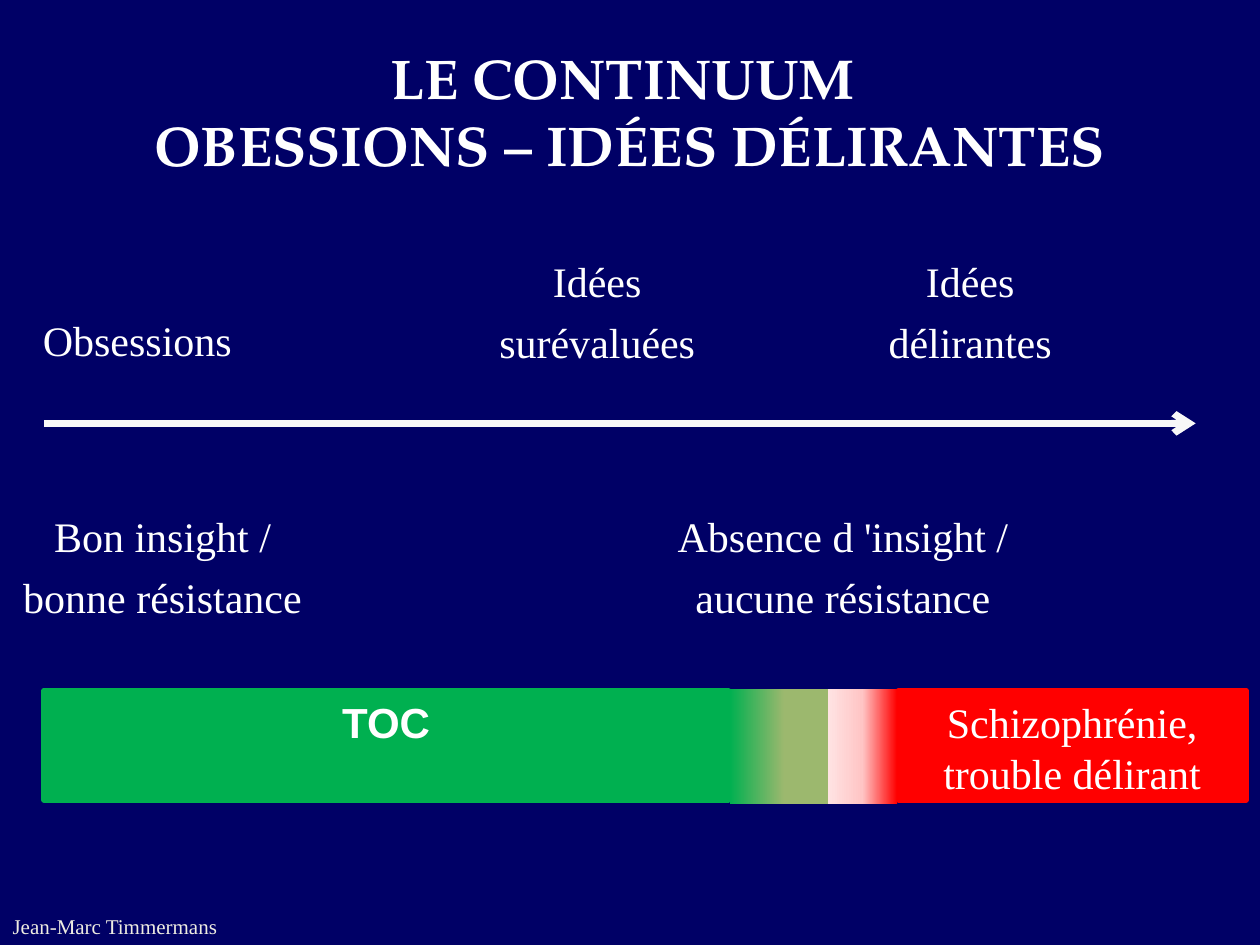
from lxml import etree
from pptx import Presentation
from pptx.dml.color import RGBColor
from pptx.enum.shapes import MSO_CONNECTOR, MSO_SHAPE
from pptx.enum.text import MSO_ANCHOR, PP_ALIGN
from pptx.oxml import parse_xml
from pptx.oxml.ns import nsdecls, qn
from pptx.util import Inches, Pt

CENTER, LEFT = PP_ALIGN.CENTER, PP_ALIGN.LEFT
TOP, MIDDLE = MSO_ANCHOR.TOP, MSO_ANCHOR.MIDDLE
RECT, STRAIGHT = MSO_SHAPE.RECTANGLE, MSO_CONNECTOR.STRAIGHT
SERIF, SANS, TITLE_FONT = "Times New Roman", "Arial", "TeX Gyre Pagella"
NAVY, WHITE, OFF_WHITE, CREAM = "000066", "FFFFFF", "F8F8F8", "EEECE1"
GREEN, OLIVE, RED, ROSE, PALE = "00B050", "9CB86E", "FF0000", "FFC5C5", "FFE3E3"


def rgb(value):
    return RGBColor.from_string(value)


def add_run(p, text, size=24, font=SERIF, color=WHITE, bold=False):
    r = p.add_run()
    r.text = text
    r.font.size, r.font.name, r.font.bold = Pt(size), font, bold
    r.font.color.rgb = rgb(color)


def add_title(s, box, lines):
    sp = s.shapes.title
    sp.left, sp.top, sp.width, sp.height = map(Inches, box)
    sp.text_frame.vertical_anchor = MIDDLE
    p = sp.text_frame.paragraphs[0]
    p.alignment = CENTER
    for i, line in enumerate(lines):
        if i:
            p.add_line_break()
        add_run(p, line, 32, TITLE_FONT, bold=True)


def add_label(s, box, lines, align=CENTER, size=24, color=WHITE):
    tf = s.shapes.add_textbox(*map(Inches, box)).text_frame
    tf.word_wrap = True
    tf.margin_left = tf.margin_right = tf.margin_top = tf.margin_bottom = 0
    for i, line in enumerate(lines):
        p = tf.add_paragraph() if i else tf.paragraphs[0]
        p.alignment = align
        if i:
            p.space_before = Pt(6)
        add_run(p, line, size, color=color)


def add_label_row(s, box, labels):
    left, top, width, height = box
    line_height = height / 2
    for center, lines in labels:
        offset = (2 - len(lines)) * line_height
        add_label(s, (left + center - width / 2, top + offset, width, height - offset), lines)


def add_arrow(s, left, right, y):
    line = s.shapes.add_connector(STRAIGHT, *map(Inches, (left, y, right, y)))
    line.line.color.rgb = rgb(OFF_WHITE)
    line.line.width = Pt(4)
    etree.SubElement(line.line._get_or_add_ln(), qn("a:tailEnd"), type="arrow")
    etree.SubElement(line._element.spPr, qn("a:effectLst"))


def add_block(s, box, color, text, font=SERIF, bold=False):
    sp = s.shapes.add_shape(RECT, *map(Inches, box))
    sp.shadow.inherit = False
    sp.fill.solid()
    sp.fill.fore_color.rgb = sp.line.color.rgb = rgb(color)
    sp.line.width = Pt(3)
    tf = sp.text_frame
    tf.word_wrap, tf.vertical_anchor = True, TOP
    p = tf.paragraphs[0]
    p.alignment = CENTER
    add_run(p, text, font=font, bold=bold)


def add_fade(s, box, colors):
    sp = s.shapes.add_shape(RECT, *map(Inches, box))
    sp.shadow.inherit = False
    sp.line.fill.background()
    step = 100000 // (len(colors) - 1)
    stops = "".join(
        f'<a:gs pos="{i * step}"><a:srgbClr val="{c}"/></a:gs>' for i, c in enumerate(colors)
    )
    sp._element.spPr.find(qn("a:prstGeom")).addnext(parse_xml(
        f'<a:gradFill {nsdecls("a")} rotWithShape="1"><a:gsLst>{stops}</a:gsLst>'
        '<a:lin ang="0" scaled="0"/></a:gradFill>'
    ))


def add_spectrum(s, box):
    left, top, width, height = box
    fade_top, fade_height = top - 0.01, height + 0.04
    add_block(s, (left, top, 5.43, height), GREEN, "TOC", SANS, True)
    add_block(s, (left + width - 2.76, top, 2.76, height), RED, "Schizophrénie, trouble délirant")
    add_fade(s, (left + 5.44, fade_top, 0.87, fade_height), (GREEN, OLIVE, OLIVE))
    add_fade(s, (left + 6.22, fade_top, 0.55, fade_height), (PALE, ROSE, RED))


def main():
    prs = Presentation()
    prs.slide_width, prs.slide_height = Inches(10), Inches(7.5)
    s = prs.slides.add_slide(prs.slide_layouts[5])
    s.background.fill.solid()
    s.background.fill.fore_color.rgb = rgb(NAVY)

    add_label(s, (0.1, 7.25, 1.85, 0.2), ["Jean-Marc Timmermans"], LEFT, 12, CREAM)
    add_title(s, (0, 0.25, 10, 1.25), ["LE CONTINUUM ", "OBESSIONS – IDÉES DÉLIRANTES"])
    add_label_row(s, (0, 2.03, 2.4, 0.94), [
        (1.09, ["Obsessions"]),
        (4.74, ["Idées", "surévaluées"]),
        (7.7, ["Idées", "délirantes"]),
    ])
    add_arrow(s, 0.35, 9.49, 3.36)
    add_label_row(s, (0, 4.05, 3, 0.94), [
        (1.29, ["Bon insight /", "bonne résistance"]),
        (6.69, ["Absence d 'insight /", "aucune résistance"]),
    ])
    add_spectrum(s, (0.35, 5.48, 9.54, 0.87))
    prs.save("out.pptx")


if __name__ == "__main__":
    main()
